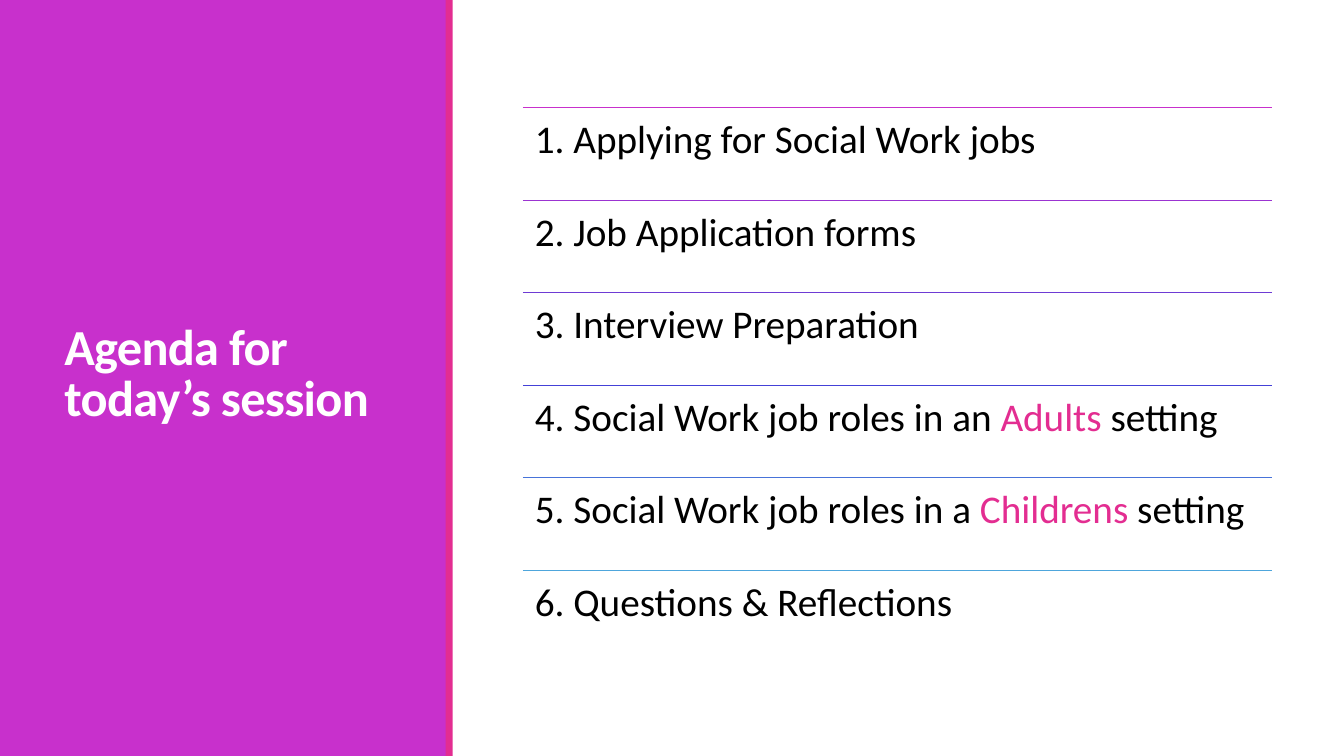
from lxml.etree import SubElement
from pptx import Presentation
from pptx.dml.color import RGBColor
from pptx.enum.shapes import MSO_CONNECTOR, MSO_SHAPE
from pptx.enum.text import MSO_ANCHOR, MSO_AUTO_SIZE, PP_ALIGN
from pptx.oxml.ns import qn
from pptx.util import Cm, Pt

COLOURS = {
    "panel": "C830CC",
    "accent": "E32D91",
    "title": "FFFFFF",
    "text": "000000",
}
RULE_COLOURS = ["C830CC", "9B34D1", "6E3BD4", "4441D7", "4773D9", "4EA6DC"]
AGENDA = [
    [("1. Applying for Social Work jobs", "text")],
    [("2. Job Application forms", "text")],
    [("3. Interview Preparation", "text")],
    [("4. Social Work job roles in an ", "text"), ("Adults", "accent"), (" setting", "text")],
    [("5. Social Work job roles in a ", "text"), ("Childrens", "accent"), (" setting", "text")],
    [("6. Questions & Reflections", "text")],
]
SLIDE_WIDTH, SLIDE_HEIGHT = 33.87, 19.05
AGENDA_LEFT, AGENDA_TOP, AGENDA_WIDTH = 13.18, 2.72, 18.87
ROW_HEIGHT = 2.33


class AgendaSlide:
    """Holds the text style and the current slide, and adds its elements."""

    def __init__(self, slide, font_name):
        self.slide = slide
        self.font_name = font_name

    def add_run(self, paragraph, text, size, colour, bold=False):
        run = paragraph.add_run()
        run.text = text
        run.font.name = self.font_name
        run.font.size = Pt(size)
        run.font.bold = bold
        run.font.color.rgb = RGBColor.from_string(COLOURS[colour])
        return run

    def add_block(self, left, width, colour):
        shape = self.slide.shapes.add_shape(
            MSO_SHAPE.RECTANGLE, Cm(left), Cm(0), Cm(width), Cm(SLIDE_HEIGHT)
        )
        shape.shadow.inherit = False
        shape.fill.solid()
        shape.fill.fore_color.rgb = RGBColor.from_string(COLOURS[colour])
        shape.line.fill.background()

    def add_title(self, text, left, top, width, height):
        title = self.slide.shapes.title
        title.left, title.top = Cm(left), Cm(top)
        title.width, title.height = Cm(width), Cm(height)
        self.slide.shapes.element.append(title.element)
        frame = title.text_frame
        frame.word_wrap = True
        frame.auto_size = MSO_AUTO_SIZE.NONE
        frame.vertical_anchor = MSO_ANCHOR.MIDDLE
        paragraph = frame.paragraphs[0]
        paragraph.alignment = PP_ALIGN.LEFT
        paragraph.line_spacing = 0.85
        run = self.add_run(paragraph, text, 36, "title", bold=True)
        run._r.get_or_add_rPr().set("spc", "-50")

    def add_rule(self, left, top, width, colour):
        rule = self.slide.shapes.add_connector(
            MSO_CONNECTOR.STRAIGHT, Cm(left), Cm(top), Cm(left + width), Cm(top)
        )
        rule.line.color.rgb = RGBColor.from_string(colour)
        rule.line.width = Pt(0.75)
        SubElement(rule.element.spPr, qn("a:effectLst"))

    def add_item(self, runs, left, top, width, height):
        box = self.slide.shapes.add_textbox(Cm(left), Cm(top), Cm(width), Cm(height))
        frame = box.text_frame
        frame.word_wrap = True
        frame.margin_left = frame.margin_right = Cm(0.3)
        frame.margin_top = frame.margin_bottom = Cm(0.3)
        paragraph = frame.paragraphs[0]
        paragraph.line_spacing = 0.9
        for text, colour in runs:
            self.add_run(paragraph, text, 28, colour)


def main():
    presentation = Presentation()
    presentation.slide_width = Cm(SLIDE_WIDTH)
    presentation.slide_height = Cm(SLIDE_HEIGHT)
    title_only = presentation.slide_layouts[5]
    agenda = AgendaSlide(presentation.slides.add_slide(title_only), "Calibri")

    agenda.add_block(0, 11.25, "panel")
    agenda.add_title("Agenda for today’s session", 1.37, 1.45, 8.56, 16.03)
    agenda.add_block(11.23, 0.18, "accent")
    for index, (runs, colour) in enumerate(zip(AGENDA, RULE_COLOURS)):
        top = AGENDA_TOP + index * ROW_HEIGHT
        agenda.add_rule(AGENDA_LEFT, top, AGENDA_WIDTH, colour)
        agenda.add_item(runs, AGENDA_LEFT, top, AGENDA_WIDTH, ROW_HEIGHT)

    presentation.save("out.pptx")


if __name__ == "__main__":
    main()
